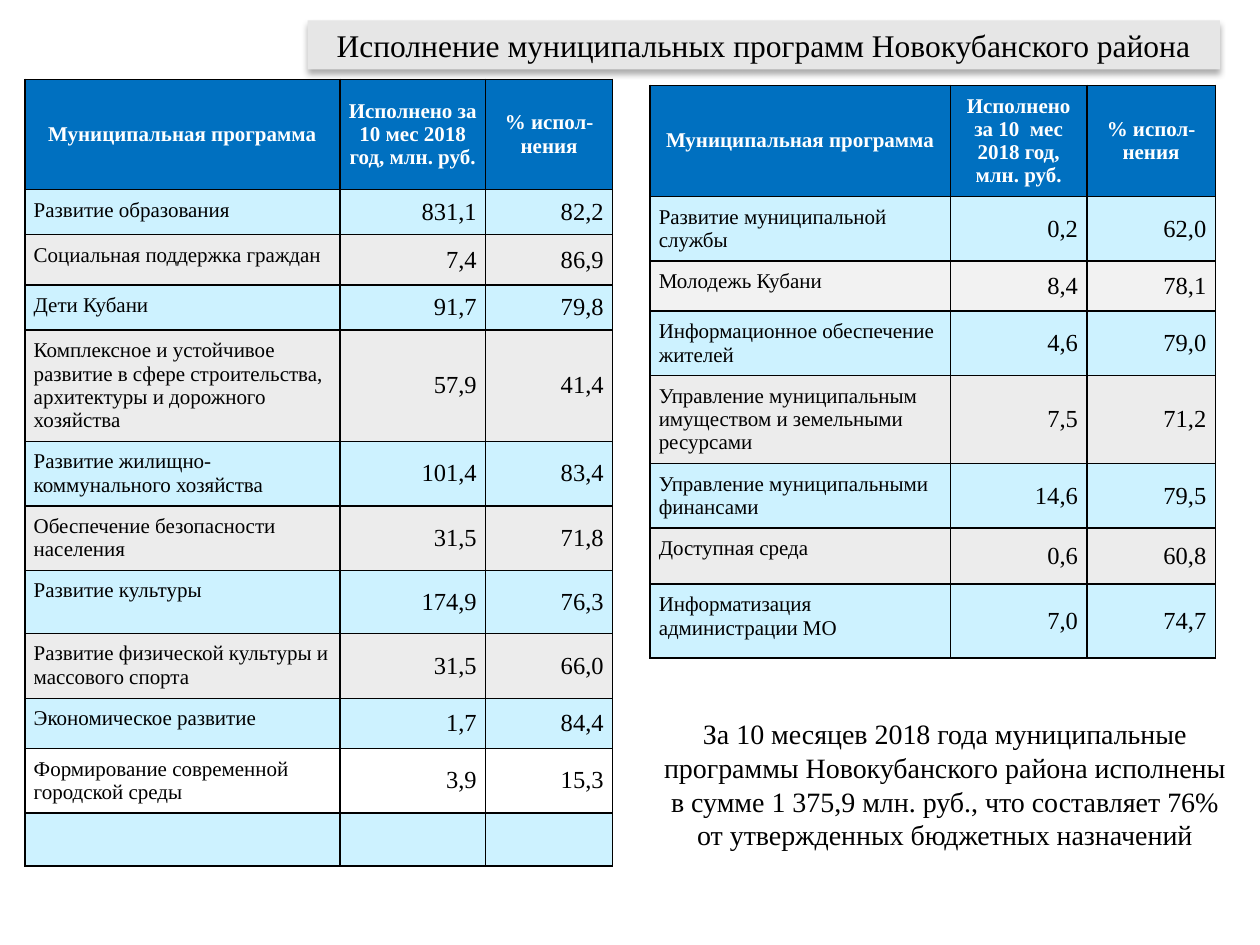
from lxml import etree
from pptx import Presentation
from pptx import util as u
from pptx.dml.color import RGBColor
from pptx.enum import text as t
from pptx.oxml import ns

BLACK = RGBColor(0x00, 0x00, 0x00)
WHITE = RGBColor(0xFF, 0xFF, 0xFF)
BLUE = RGBColor(0x00, 0x70, 0xC0)
SKY = RGBColor(0xCD, 0xF2, 0xFF)
GREY = RGBColor(0xEC, 0xEC, 0xEC)
PALE = RGBColor(0xF2, 0xF2, 0xF2)
SILVER = RGBColor(0xE6, 0xE6, 0xE6)
FONT = "Times New Roman"

TITLE = "Исполнение муниципальных программ Новокубанского района"
NOTE = ("За 10 месяцев 2018 года муниципальные программы Новокубанского района "
        "исполнены в сумме 1 375,9 млн. руб., что составляет 76% "
        "от утвержденных бюджетных назначений")
PROG, RATE = "Муниципальная программа", "% испол-нения"

TABLES = [
    {"at": (13.1, 1.72), "cols": (6.06, 2.75, 2.59), "rows": [
        (2.22, BLUE, PROG, "Исполнено за 10  мес 2018 год, млн. руб.", RATE),
        (1.29, SKY, "Развитие муниципальной службы", "0,2", "62,0"),
        (1.01, PALE, "Молодежь Кубани", "8,4", "78,1"),
        (1.28, SKY, "Информационное обеспечение жителей", "4,6", "79,0"),
        (1.76, GREY, "Управление муниципальным имуществом и земельными ресурсами",
         "7,5", "71,2"),
        (1.28, SKY, "Управление муниципальными финансами", "14,6", "79,5"),
        (1.13, GREY, "Доступная среда", "0,6", "60,8"),
        (1.49, SKY, "Информатизация администрации МО", "7,0", "74,7"),
    ]},
    {"at": (0.5, 1.6), "cols": (6.35, 2.94, 2.56), "rows": [
        (2.22, BLUE, PROG, "Исполнено за 10 мес 2018 год, млн. руб.", RATE),
        (0.89, SKY, "Развитие образования", "831,1", "82,2"),
        (1.02, GREY, "Социальная поддержка граждан", "7,4", "86,9"),
        (0.89, SKY, "Дети Кубани", "91,7", "79,8"),
        (2.22, GREY, "Комплексное и устойчивое развитие в сфере строительства, "
         "архитектуры и дорожного хозяйства", "57,9", "41,4"),
        (1.29, SKY, "Развитие жилищно-коммунального хозяйства", "101,4", "83,4"),
        (1.29, GREY, "Обеспечение безопасности населения", "31,5", "71,8"),
        (1.27, SKY, "Развитие культуры", "174,9", "76,3"),
        (1.31, GREY, "Развитие физической культуры и массового спорта", "31,5", "66,0"),
        (1.01, SKY, "Экономическое развитие", "1,7", "84,4"),
        (1.29, WHITE, "Формирование современной городской среды", "3,9", "15,3"),
        (1.02, SKY, "", "", ""),
    ]},
]


def write(frame, words, size=12, color=BLACK, bold=False, align=t.PP_ALIGN.CENTER):
    frame.word_wrap = True
    para = frame.paragraphs[0]
    para.alignment = align
    run = para.add_run()
    run.text = words
    run.font.name = FONT
    run.font.size = u.Pt(size)
    run.font.bold = bold
    run.font.color.rgb = color


def paint(item, color):
    item.fill.solid()
    item.fill.fore_color.rgb = color


def frame_cell(cell):
    props = cell._tc.get_or_add_tcPr()
    for spot, side in enumerate(("lnL", "lnR", "lnT", "lnB")):
        line = etree.Element(ns.qn("a:" + side), w=str(u.Pt(1)))
        fill = etree.SubElement(line, ns.qn("a:solidFill"))
        etree.SubElement(fill, ns.qn("a:srgbClr"), val=str(BLACK))
        props.insert(spot, line)


def add_shade(shape):
    box = etree.SubElement(shape._element.spPr, ns.qn("a:effectLst"))
    shade = etree.SubElement(box, ns.qn("a:outerShdw"), blurRad=str(u.Pt(3.5)),
                             dist=str(u.Pt(2.2)), dir="5400000", rotWithShape="0")
    tint = etree.SubElement(shade, ns.qn("a:srgbClr"), val=str(BLACK))
    etree.SubElement(tint, ns.qn("a:alpha"), val="32000")


def add_grid(slide, at, cols, rows):
    left, top = at
    high = sum(row[0] for row in rows)
    grid = slide.shapes.add_table(len(rows), len(cols), u.Cm(left), u.Cm(top),
                                  u.Cm(sum(cols)), u.Cm(high)).table
    for col, wide in zip(grid.columns, cols):
        col.width = u.Cm(wide)
    for r, (tall, fill, *words) in enumerate(rows):
        grid.rows[r].height = u.Cm(tall)
        for c, word in enumerate(words):
            cell = grid.cell(r, c)
            cell.margin_left = cell.margin_right = u.Cm(0.18)
            cell.margin_top = cell.margin_bottom = u.Cm(0.18)
            paint(cell, fill)
            frame_cell(cell)
            cell.vertical_anchor = t.MSO_ANCHOR.MIDDLE
            if r == 0:
                write(cell.text_frame, word, color=WHITE, bold=True)
            elif c == 0:
                cell.vertical_anchor = t.MSO_ANCHOR.TOP
                write(cell.text_frame, word, align=t.PP_ALIGN.LEFT)
            else:
                write(cell.text_frame, word, size=14, align=t.PP_ALIGN.RIGHT)


def main():
    deck = Presentation()
    deck.slide_width, deck.slide_height = u.Cm(25.4), u.Cm(19.05)
    slide = deck.slides.add_slide(deck.slide_layouts[5])

    title = slide.shapes.title
    title.left, title.top = u.Cm(6.2), u.Cm(0.41)
    title.width, title.height = u.Cm(18.39), u.Cm(0.99)
    paint(title, SILVER)
    add_shade(title)
    title.text_frame.auto_size = t.MSO_AUTO_SIZE.NONE
    title.text_frame.vertical_anchor = t.MSO_ANCHOR.MIDDLE
    write(title.text_frame, TITLE, size=18)

    for spec_row in TABLES:
        add_grid(slide, **spec_row)

    note = slide.shapes.add_textbox(u.Cm(13.03), u.Cm(14.33), u.Cm(12.04), u.Cm(3))
    note.text_frame.auto_size = t.MSO_AUTO_SIZE.SHAPE_TO_FIT_TEXT
    write(note.text_frame, NOTE, size=16)

    deck.save("out.pptx")


if __name__ == "__main__":
    main()
